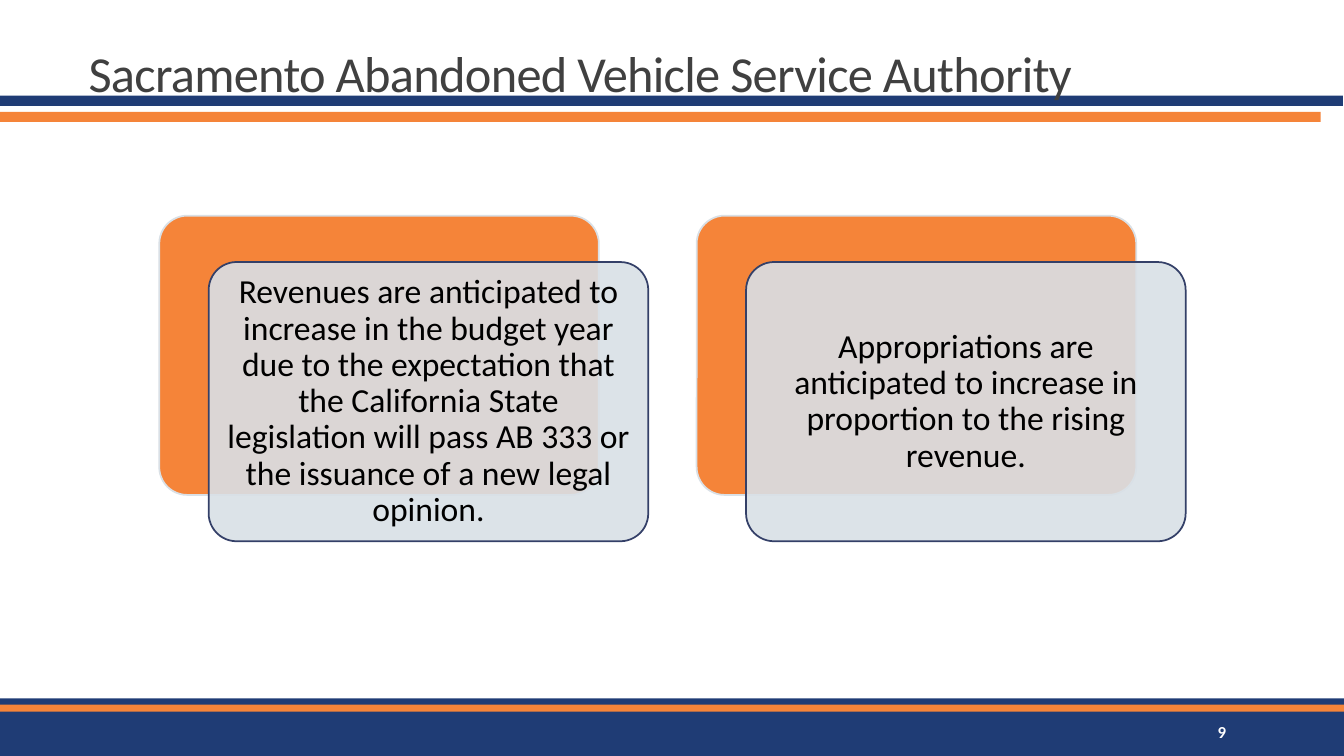
from pptx import Presentation
from pptx.dml.color import RGBColor
from pptx.enum.shapes import MSO_SHAPE as SHAPE
from pptx.enum.text import MSO_ANCHOR as ANCHOR, PP_ALIGN as ALIGN
from pptx.oxml.xmlchemy import OxmlElement
from pptx.util import Pt

PX = 9144  # EMU per px, 100 px to the inch
THEME = dict(
    font="Calibri", navy="1F3C75", orange="F58439", mist="D9E0E6", outline="344068",
    title="404040", body="000000", white="FFFFFF",
    title_size=36, body_size=24, number_size=12,
)


def add_text(text, box, size, color, align=ALIGN.LEFT, anchor=ANCHOR.MIDDLE,
             inset=(10, 5), line=1.0, bold=False, spacing=None):
    tf = s.shapes.add_textbox(*[v * PX for v in box]).text_frame
    tf.word_wrap = True
    tf.vertical_anchor = anchor
    tf.margin_left = tf.margin_right = inset[0] * PX
    tf.margin_top = tf.margin_bottom = inset[1] * PX
    p = tf.paragraphs[0]
    p.alignment, p.line_spacing = align, line
    r = p.add_run()
    r.text = text
    r.font.name, r.font.size, r.font.bold = THEME["font"], Pt(THEME[size]), bold
    r.font.color.rgb = RGBColor.from_string(THEME[color])
    if spacing is not None:
        r.font._element.set("spc", str(spacing))


def add_block(kind, box, fill, line=None, alpha=None):
    sp = s.shapes.add_shape(kind, *[v * PX for v in box])
    sp.shadow.inherit = False
    sp.fill.solid()
    sp.fill.fore_color.rgb = RGBColor.from_string(THEME[fill])
    if kind == SHAPE.ROUNDED_RECTANGLE:
        sp.adjustments[0] = 0.1
    if line:
        sp.line.color.rgb = RGBColor.from_string(THEME[line])
        sp.line.width = Pt(1.25)
    else:
        sp.line.fill.background()
    if alpha is not None:
        a = OxmlElement("a:alpha")
        a.set("val", str(alpha * 1000))
        sp.fill._xPr.find(".//{*}srgbClr").append(a)


prs = Presentation()
prs.slide_width, prs.slide_height = 1333 * PX, 750 * PX
s = prs.slides.add_slide(prs.slide_layouts[6])

# Footer and header bands
for box, fill in [
    ((0, 700, 1333, 50), "navy"),
    ((0, 693, 1333, 7), "navy"),
    ((0, 699, 1333, 7), "orange"),
    ((0, 111, 1310, 10), "orange"),
    ((-1, 95, 1333, 10), "navy"),
]:
    add_block(SHAPE.RECTANGLE, box, fill)

# Page number
add_text("9", (1083, 706, 143, 40), "number_size", "white", align=ALIGN.RIGHT, bold=True)

# Cards: an orange back plate, a translucent front plate and its text
CARD_W, CARD_H, CARD_TOP, CARD_LEFT, CARD_STEP = 436, 277, 214, 158, 533
SHIFT_X, SHIFT_Y, PAD = 49, 46, 8
cards = [
    "Revenues are anticipated to increase in the budget year due to the expectation that "
    "the California State legislation will pass AB 333 or the issuance of a new legal opinion.",
    "Appropriations are anticipated to increase in proportion to the rising revenue.",
]
for i, text in enumerate(cards):
    x, y = CARD_LEFT + i * CARD_STEP, CARD_TOP
    add_block(SHAPE.ROUNDED_RECTANGLE, (x, y, CARD_W, CARD_H), "orange", line="mist")
    x, y = x + SHIFT_X, y + SHIFT_Y
    add_block(SHAPE.ROUNDED_RECTANGLE, (x, y, CARD_W, CARD_H), "mist", line="outline", alpha=90)
    add_text(text, (x + PAD, y + PAD, CARD_W - 2 * PAD, CARD_H - 2 * PAD),
             "body_size", "body", align=ALIGN.CENTER, inset=(10, 10), line=0.9)

# Title
add_text("Sacramento Abandoned Vehicle Service Authority", (78, 19, 1100, 88),
         "title_size", "title", anchor=ANCHOR.BOTTOM, line=0.85, spacing=-50)

prs.save("out.pptx")
